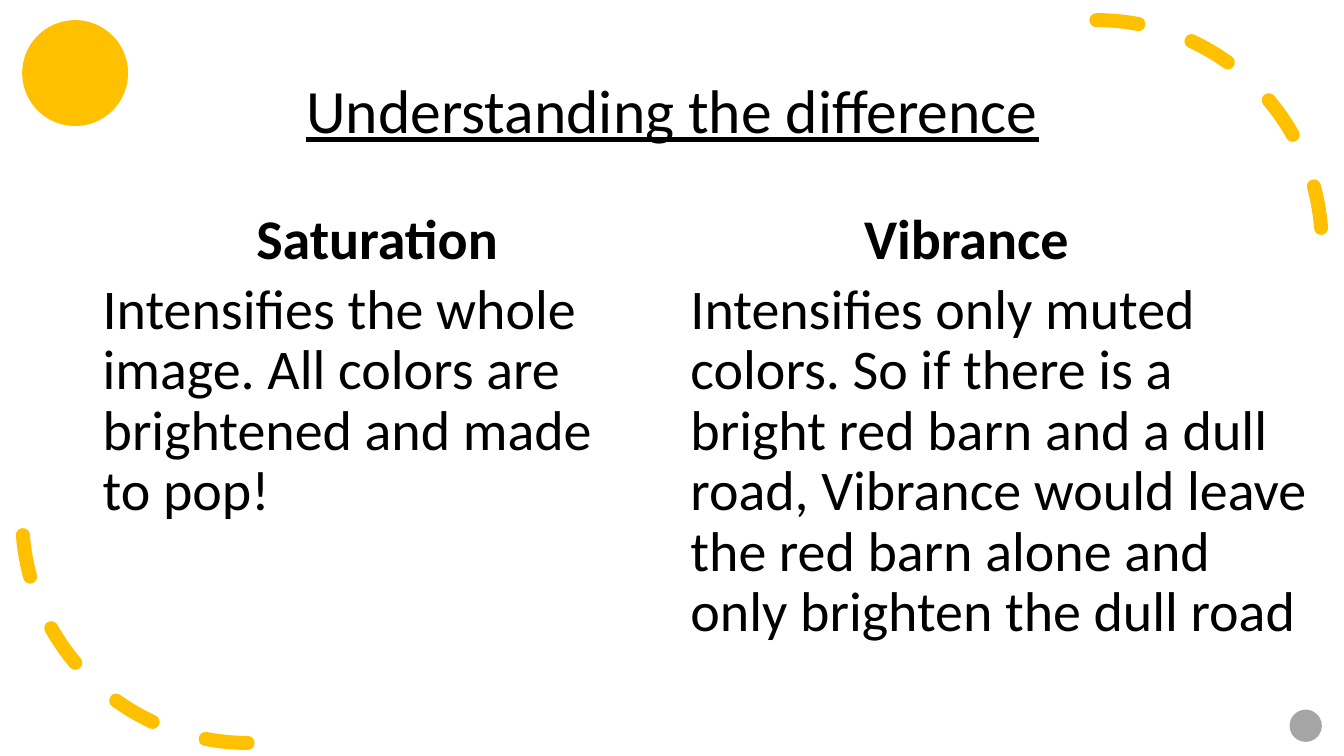
from pptx import Presentation
from pptx.enum import dml, shapes, text
from pptx.dml.color import RGBColor
from pptx.util import Inches, Pt

TITLE = "Understanding the difference"
# heading, explanation, left, heading width, explanation width
COLUMNS = [
    ("Saturation",
     "Intensifies the whole image. All colors are brightened and made to pop!",
     0.92, 5.64, 5.64),
    ("Vibrance",
     "Intensifies only muted colors. So if there is a bright red barn and a dull "
     "road, Vibrance would leave the red barn alone and only brighten the dull road",
     6.75, 5.67, 6.36),
]
COLORS = {"text": "000000", "gold": "FFC000", "gray": "A5A5A5", "page": "FFFFFF"}
FONT = "Calibri"

WIDTH, HEIGHT = 13.33, 7.5
MARGIN_X, MARGIN_TOP, MARGIN_BOTTOM = 0.22, 0.2, 0.13
HEADING_TOP, HEADING_HEIGHT, BODY_HEIGHT = 1.84, 0.9, 4.03
ARC, SUN, DOT = 4.47, 1.05, 0.32

# left, top, diameter, color
DISCS = [
    (MARGIN_X, MARGIN_TOP, SUN, "gold"),
    (WIDTH - MARGIN_X - DOT, HEIGHT - 0.14 - DOT, DOT, "gray"),
]
# left, top, rotation
ARCS = [
    (MARGIN_X, HEIGHT - MARGIN_BOTTOM - ARC, 180),
    (WIDTH - MARGIN_X - ARC, MARGIN_TOP, 0),
]


def color(name):
    return RGBColor.from_string(COLORS[name])


def write(frame, words, size, anchor, align, bold=False, underline=False):
    frame.word_wrap = True
    frame.auto_size = text.MSO_AUTO_SIZE.NONE
    frame.vertical_anchor = anchor
    frame.text = words
    paragraph = frame.paragraphs[0]
    paragraph.alignment = align
    paragraph.line_spacing = 0.9
    font = paragraph.font
    font.name, font.size, font.bold, font.underline = FONT, Pt(size), bold, underline
    font.color.rgb = color("text")


def add_square(slide, kind, left, top, size):
    square = slide.shapes.add_shape(
        kind, Inches(left), Inches(top), Inches(size), Inches(size))
    square.shadow.inherit = False
    return square


def main():
    deck = Presentation()
    deck.slide_width, deck.slide_height = Inches(WIDTH), Inches(HEIGHT)
    slide = deck.slides.add_slide(deck.slide_layouts[5])
    slide.background.fill.solid()
    slide.background.fill.fore_color.rgb = color("page")

    middle, center = text.MSO_ANCHOR.MIDDLE, text.PP_ALIGN.CENTER
    title = slide.shapes.title
    title.left, title.top = Inches(0.92), Inches(0.4)
    title.width, title.height = Inches(11.5), Inches(1.45)
    write(title.text_frame, TITLE, 44, middle, center, underline=True)

    for heading, explanation, left, heading_width, body_width in COLUMNS:
        heading_box = slide.shapes.add_textbox(
            Inches(left), Inches(HEADING_TOP),
            Inches(heading_width), Inches(HEADING_HEIGHT))
        write(heading_box.text_frame, heading, 40,
              text.MSO_ANCHOR.BOTTOM, center, bold=True)
        body_box = slide.shapes.add_textbox(
            Inches(left), Inches(HEADING_TOP + HEADING_HEIGHT),
            Inches(body_width), Inches(BODY_HEIGHT))
        write(body_box.text_frame, explanation, 40,
              text.MSO_ANCHOR.TOP, text.PP_ALIGN.LEFT)

    for left, top, rotation in ARCS:
        arc = add_square(slide, shapes.MSO_SHAPE.ARC, left, top, ARC)
        arc.adjustments[0], arc.adjustments[1] = 162, 0
        arc.rotation = rotation
        arc.fill.background()
        arc.line.color.rgb = color("gold")
        arc.line.width = Pt(10)
        arc.line.dash_style = dml.MSO_LINE.DASH
        arc.line._get_or_add_ln().set("cap", "rnd")

    for left, top, diameter, shade in DISCS:
        disc = add_square(slide, shapes.MSO_SHAPE.OVAL, left, top, diameter)
        disc.fill.solid()
        disc.fill.fore_color.rgb = color(shade)
        disc.line.fill.background()

    deck.save("out.pptx")


if __name__ == "__main__":
    main()
